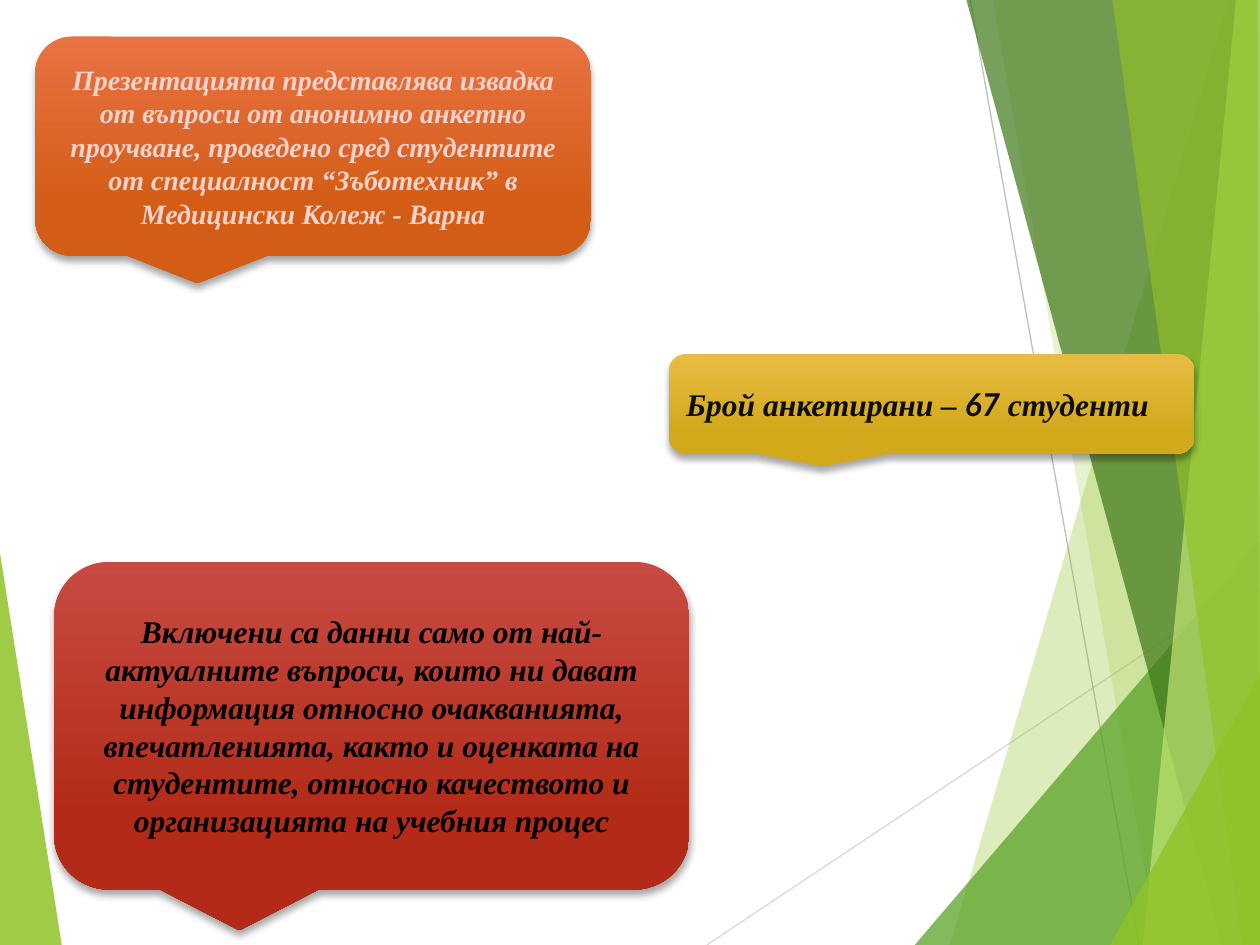
from lxml import etree
from pptx import Presentation
from pptx import util as u
from pptx.dml.color import RGBColor
from pptx.enum import shapes, text
from pptx.oxml.ns import qn

WIDTH, HEIGHT = 10, 7.5
SERIF = "Times New Roman"

# Thin lines: start, end, colour
LINES = [
    ((5.61, 7.5), (10.01, 4.57), "D9D9D9"),
    ((7.7, 0), (9.04, 7.5), "BFBFBF"),
]
# Translucent facets: corners, colour, opacity in percent
FACETS = [
    ([(0, 4.39), (0.49, 7.5), (0, 7.5)], "90C226", 85),
    ([(9.75, 0), (7.54, 7.5), (10, 7.5), (10, 0)], "90C226", 30),
    ([(7.88, 0), (9.19, 7.5), (10, 7.5), (10, 0)], "90C226", 20),
    ([(7.26, 7.5), (10, 4.29), (10, 7.5)], "54A021", 72),
    ([(7.67, 0), (9.7, 7.5), (10, 7.5), (10, 0)], "3F7819", 70),
    ([(9.81, 0), (9.07, 7.5), (10, 7.5), (10, 0)], "C0E474", 70),
    ([(8.83, 0), (9.86, 7.5), (10, 7.5), (9.98, 0)], "90C226", 65),
    ([(8.81, 7.5), (10, 5.35), (10, 7.5)], "90C226", 80),
]
# Callouts: box, gradient, alignment, size, text colour, (text, font) spans
CALLOUTS = [
    ((0.28, 0.29, 4.41, 1.74), ("E87242", "D35D16"), "CENTER", 16, "F8D2CC",
     [("Презентацията представлява извадка от въпроси от анонимно анкетно "
       "проучване, проведено сред студентите от специалност “Зъботехник” в "
       "Медицински Колеж - Варна", SERIF)]),
    ((0.43, 4.46, 5.04, 2.6), ("C74B42", "B32B18"), "CENTER", 18, "000000",
     [("Включени са данни само от най-актуалните въпроси, които ни дават "
       "информация относно очакванията, впечатленията, както и оценката на "
       "студентите, относно качеството и организацията на учебния процес",
       SERIF)]),
    ((5.31, 2.81, 4.17, 0.79), ("E7BC43", "D2A91B"), "LEFT", 18, "0D0D0D",
     [("Брой анкетирани – ", SERIF), ("67", "Lato"), (" студенти", SERIF)]),
]


def color(value):
    return RGBColor.from_string(value)


def inches(values):
    return [u.Inches(value) for value in values]


def add_child(parent, tag, **attributes):
    values = {name: str(value) for name, value in attributes.items()}
    return etree.SubElement(parent, qn(tag), values)


def add_line(page, start, end, line_color):
    line = page.shapes.add_connector(
        shapes.MSO_CONNECTOR.STRAIGHT, *inches(start + end))
    line.line.color.rgb = color(line_color)
    line.line.width = u.Pt(0.75)
    add_child(line.element.spPr, "a:effectLst")


def add_facet(page, corners, fill_color, opacity):
    points = [inches(corner) for corner in corners]
    builder = page.shapes.build_freeform(*points[0])
    builder.add_line_segments(points[1:], close=True)
    facet = builder.convert_to_shape()
    facet.shadow.inherit = False
    facet.line.fill.background()
    facet.fill.solid()
    facet.fill.fore_color.rgb = color(fill_color)
    tint = facet.element.spPr.find(".//" + qn("a:srgbClr"))
    add_child(tint, "a:alpha", val=opacity * 1000)


def add_shadow(shape):
    shape.shadow.inherit = False
    effects = shape.element.spPr.find(qn("a:effectLst"))
    shadow = add_child(effects, "a:outerShdw", blurRad=u.Pt(4), dist=u.Pt(3),
                       dir=90 * 60000, rotWithShape=0)
    tint = add_child(shadow, "a:srgbClr", val="000000")
    add_child(tint, "a:alpha", val=35000)


def add_callout(page, box, gradient, align, size, text_color, spans):
    callout = page.shapes.add_shape(
        shapes.MSO_SHAPE.ROUNDED_RECTANGULAR_CALLOUT, *inches(box))
    callout.line.fill.background()
    callout.fill.gradient()
    callout.fill.gradient_angle = 270  # top to bottom
    for stop, position, value in zip(
            callout.fill.gradient_stops, (0, 0.78), gradient):
        stop.position = position
        stop.color.rgb = color(value)
    add_shadow(callout)

    frame = callout.text_frame
    frame.word_wrap = True
    frame.vertical_anchor = text.MSO_ANCHOR.MIDDLE
    para = frame.paragraphs[0]
    para.alignment = text.PP_ALIGN[align]
    for words, font in spans:
        span = para.add_run()
        span.text = words
        span.font.color.rgb = color(text_color)
        formats = {"name": font, "size": u.Pt(size), "bold": True, "italic": True}
        for name, value in formats.items():
            setattr(span.font, name, value)


def add_backdrop(page):
    for line in LINES:
        add_line(page, *line)
    for facet in FACETS:
        add_facet(page, *facet)


def main():
    deck = Presentation()
    deck.slide_width, deck.slide_height = inches((WIDTH, HEIGHT))
    page = deck.slides.add_slide(deck.slide_layouts[6])
    add_backdrop(page)
    for callout in CALLOUTS:
        add_callout(page, *callout)
    deck.save("out.pptx")


if __name__ == "__main__":
    main()
